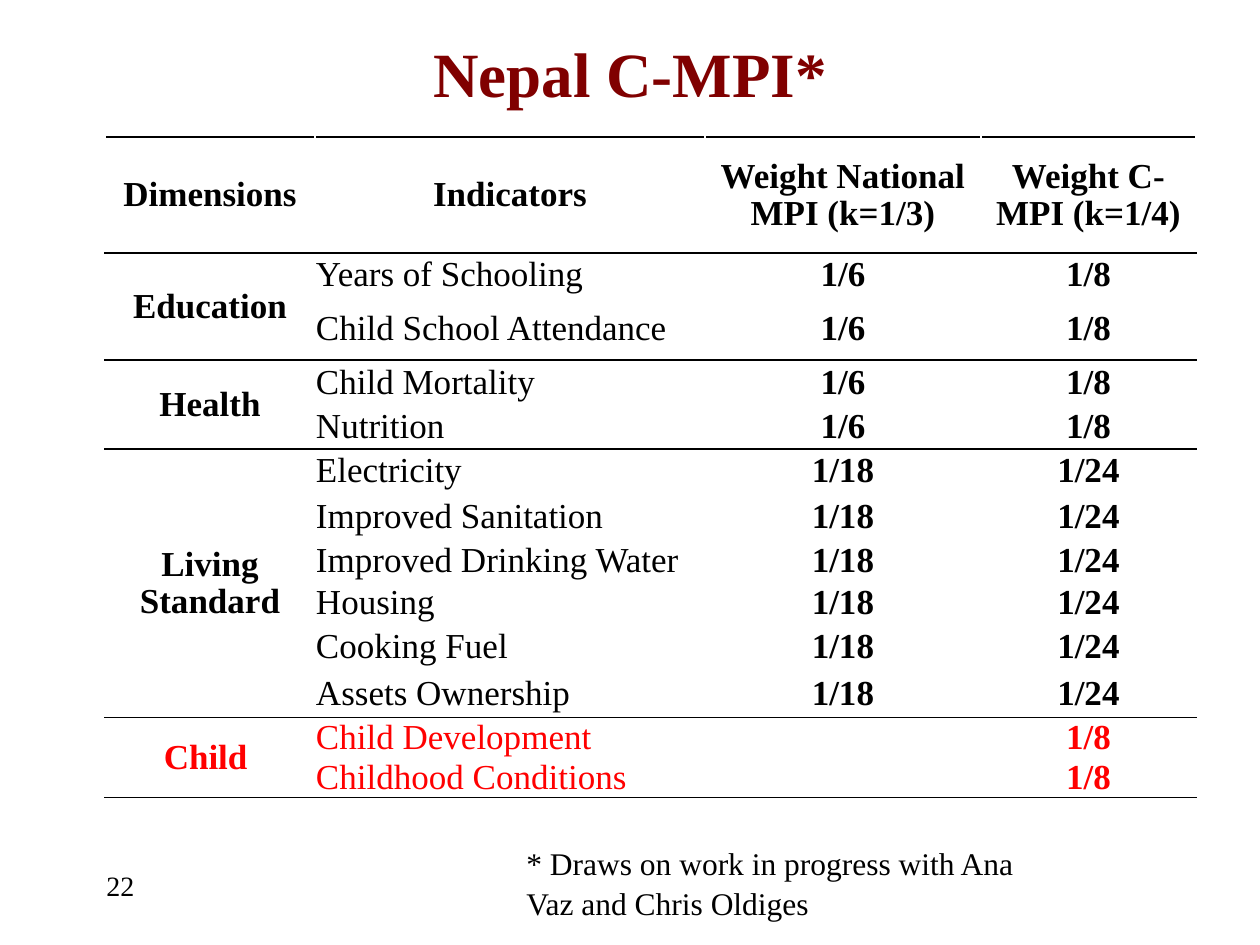
from lxml import etree
from pptx import Presentation
from pptx import util as u
from pptx.dml.color import RGBColor
from pptx.enum import text
from pptx.oxml import ns

PX = u.Inches(1) // 126
FONT = "Times New Roman"
BLACK = RGBColor(0x00, 0x00, 0x00)
WHITE = RGBColor(0xFF, 0xFF, 0xFF)
RED = RGBColor(0xFF, 0x00, 0x00)
MAROON = RGBColor(0x80, 0x00, 0x00)
LEFT, CENTER = text.PP_ALIGN.LEFT, text.PP_ALIGN.CENTER
MIDDLE, TOP = text.MSO_ANCHOR.MIDDLE, text.MSO_ANCHOR.TOP


def write(paragraph, words, size, color=BLACK, bold=False, align=LEFT, spacing=1.0):
    paragraph.alignment = align
    paragraph.line_spacing = spacing
    run = paragraph.add_run()
    run.text = words
    run.font.name = FONT
    run.font.size = u.Pt(size)
    run.font.bold = bold
    run.font.color.rgb = color


def add_border(cell, side, color):
    line = etree.SubElement(cell._tc.get_or_add_tcPr(), ns.qn("a:ln" + side), w=str(u.Pt(1)))
    fill = etree.SubElement(line, ns.qn("a:solidFill"))
    etree.SubElement(fill, ns.qn("a:srgbClr"), val=str(color))


presentation = Presentation()
presentation.slide_width, presentation.slide_height = 1260 * PX, 945 * PX
slide = presentation.slides.add_slide(presentation.slide_layouts[6])

# Table content: dimension, colour, indicators with both weights
HEADINGS = ["Dimensions", "Indicators", "Weight National MPI (k=1/3)", "Weight C-MPI (k=1/4)"]
DIMENSIONS = [
    ("Education", BLACK, ["Years of Schooling", "Child School Attendance"], "1/6", "1/8"),
    ("Health", BLACK, ["Child Mortality", "Nutrition"], "1/6", "1/8"),
    ("Living Standard", BLACK,
     ["Electricity", "Improved Sanitation", "Improved Drinking Water",
      "Housing", "Cooking Fuel", "Assets Ownership"], "1/18", "1/24"),
    ("Child ", RED, ["Child Development", "Childhood Conditions"], "", "1/8"),
]
COLUMN_WIDTHS = [210, 390, 276, 215]
ROW_HEIGHTS = [116, 44, 63, 45, 44, 44, 48, 40, 44, 45, 48, 40, 40]

rows = [(HEADINGS, BLACK)]
group_starts = [0]
for dimension, color, indicators, national, child in DIMENSIONS:
    group_starts.append(len(rows))
    for number, indicator in enumerate(indicators):
        label = dimension if number == 0 else ""
        rows.append(([label, indicator, national, child], color))
group_ends = [start - 1 for start in group_starts[1:]] + [len(rows) - 1]

# Table
table = slide.shapes.add_table(
    len(rows), len(HEADINGS), 105 * PX, 137 * PX,
    sum(COLUMN_WIDTHS) * PX, sum(ROW_HEIGHTS) * PX).table
table.first_row = False
table.horz_banding = False
for column, width in zip(table.columns, COLUMN_WIDTHS):
    column.width = width * PX
for row, height in zip(table.rows, ROW_HEIGHTS):
    row.height = height * PX

for row_index, (values, color) in enumerate(rows):
    for column_index, value in enumerate(values):
        cell = table.cell(row_index, column_index)
        spans = column_index == 0
        rule_above = row_index in group_starts
        rule_below = row_index in group_ends or (spans and rule_above)
        add_border(cell, "L", WHITE)
        add_border(cell, "R", WHITE)
        add_border(cell, "T", BLACK if rule_above else WHITE)
        add_border(cell, "B", BLACK if rule_below else WHITE)
        cell.fill.background()
        cell.margin_left = cell.margin_right = cell.margin_top = PX
        cell.margin_bottom = 0
        cell.vertical_anchor = MIDDLE
        if value:
            is_indicator = column_index == 1 and row_index > 0
            write(cell.text_frame.paragraphs[0], value, 20, color, not is_indicator,
                  LEFT if is_indicator else CENTER, 0.96)

for start, end in zip(group_starts[1:], group_ends[1:]):
    table.cell(start, 0).merge(table.cell(end, 0))

# Title, footnote and slide number
TEXTS = [
    ((68, 0, 1124, 145), MIDDLE, "Nepal C-MPI*", 36, MAROON, True, CENTER, 1.0),
    ((514, 836, 514, 89), TOP, "* Draws on work in progress with Ana Vaz and Chris Oldiges",
     18, BLACK, False, LEFT, 1.05),
    ((94, 862, 262, 63), TOP, "22", 16, BLACK, False, LEFT, 1.0),
]
for box, anchor, *style in TEXTS:
    frame = slide.shapes.add_textbox(*(length * PX for length in box)).text_frame
    frame.word_wrap = True
    frame.vertical_anchor = anchor
    write(frame.paragraphs[0], *style)

presentation.save("out.pptx")
